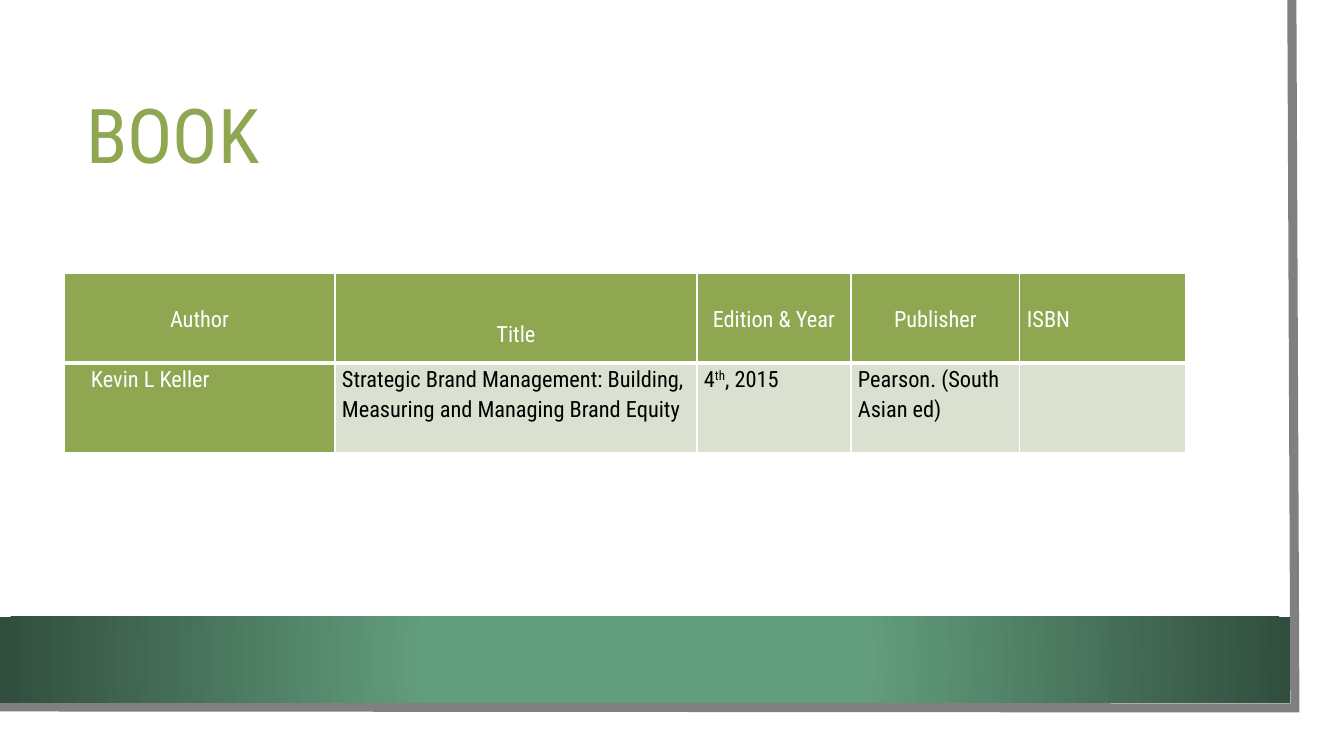
from pptx import Presentation
from pptx.dml.color import RGBColor
from pptx.enum.shapes import MSO_SHAPE
from pptx.enum.text import MSO_ANCHOR, PP_ALIGN
from pptx.oxml import parse_xml
from pptx.oxml.ns import nsdecls
from pptx.util import Pt

# Content: each cell is a list of (text, superscript) runs
TITLE = "BOOK"
HEADS = ["Author", "Title", "Edition & Year", "Publisher", "ISBN"]
BOOK = [
    [("Kevin L Keller", False)],
    [("Strategic Brand Management: Building, Measuring and Managing Brand Equity", False)],
    [("4", False), ("th", True), (", 2015", False)],
    [("Pearson. (South Asian ed)", False)],
    [],
]
ROWS = [[[(head, False)] for head in HEADS], BOOK]

# Layout in px
SLIDE = (1344, 756)
HEADING = (76, 76, 1146, 127)
BAND = (0, 617, 1290, 86)
EDGE = [(1292, 0), (1295, 708), (0, 707)]
GRID = (64, 273)
COLS = [271, 362, 154, 169, 166]
ROW_H = 90
PAD = 7
DROP = 30    # extra top margin of the "Title" head
INDENT = 20  # extra left margin of the author's name

FONT = "Roboto Condensed"
GREEN, PALE, WHITE, BLACK, GREY = "8FA751", "DBE1D0", "FFFFFF", "000000", "808080"


def px(n):
    return round(n * 914400 / 100.8)


def box(area):
    return [px(n) for n in area]


def rgb(code):
    return RGBColor.from_string(code)


def style(font, size, color):
    for name, value in {"name": FONT, "size": Pt(size), "bold": False}.items():
        setattr(font, name, value)
    font.color.rgb = rgb(color)


def border(cell, widths):
    props = cell._tc.get_or_add_tcPr()
    for spot, (side, width) in enumerate(widths.items()):
        props.insert(spot, parse_xml(
            f'<a:{side} {nsdecls("a")} w="{Pt(width)}"><a:solidFill>'
            f'<a:srgbClr val="{WHITE}"/></a:solidFill></a:{side}>'))


def draw_frame(slide):
    # Grey line along the right and bottom edges
    pen = slide.shapes.build_freeform(*EDGE[0], scale=px(1))
    pen.add_line_segments(EDGE[1:], close=False)
    edge = pen.convert_to_shape()
    edge.shadow.inherit = False
    edge.fill.background()
    edge.line.color.rgb = rgb(GREY)
    edge.line.width = Pt(6.5)
    edge.line._get_or_add_ln().append(
        parse_xml(f'<a:miter {nsdecls("a")} lim="800000"/>'))

    # Green band with a radial gradient
    band = slide.shapes.add_shape(MSO_SHAPE.RECTANGLE, *box(BAND))
    band.shadow.inherit = False
    band.line.fill.background()
    band.fill.gradient()
    grad = band._element.spPr.find("{*}gradFill")
    grad.getparent().replace(grad, parse_xml(
        f'<a:gradFill {nsdecls("a")} rotWithShape="1"><a:gsLst>'
        '<a:gs pos="34000"><a:srgbClr val="629D7D"/></a:gs>'
        '<a:gs pos="100000"><a:srgbClr val="314E3E"/></a:gs></a:gsLst>'
        '<a:path path="circle"><a:fillToRect l="50000" t="50000" r="50000" b="50000"/>'
        '</a:path></a:gradFill>'))


def draw_title(slide):
    title = slide.shapes.title
    title.left, title.top, title.width, title.height = box(HEADING)
    frame = title.text_frame
    frame.text = TITLE
    frame.word_wrap = True
    frame.vertical_anchor = MSO_ANCHOR.MIDDLE
    para = frame.paragraphs[0]
    para.alignment = PP_ALIGN.LEFT
    para.line_spacing = 0.9
    style(para.runs[0].font, 54, GREEN)


def draw_table(slide):
    area = box((*GRID, sum(COLS), ROW_H * len(ROWS)))
    table = slide.shapes.add_table(len(ROWS), len(COLS), *area).table
    table.horz_banding = False
    for col, width in zip(table.columns, COLS):
        col.width = px(width)
    for r, row in enumerate(ROWS):
        table.rows[r].height = px(ROW_H)
        for c, runs in enumerate(row):
            cell = table.cell(r, c)
            head = r == 0
            green = head or c == 0
            look = {
                "margin_left": px(PAD + (INDENT if (r, c) == (1, 0) else 0)),
                "margin_right": px(PAD),
                "margin_top": px(DROP if (r, c) == (0, 1) else 0),
                "margin_bottom": 0,
                "vertical_anchor": MSO_ANCHOR.MIDDLE if head else MSO_ANCHOR.TOP,
            }
            for name, value in look.items():
                setattr(cell, name, value)
            cell.fill.solid()
            cell.fill.fore_color.rgb = rgb(GREEN if green else PALE)
            border(cell, {"lnL": 1, "lnR": 1, "lnT": 1 if head else 3,
                          "lnB": 3 if head else 1})
            para = cell.text_frame.paragraphs[0]
            para.line_spacing = 1.15
            centred = head and c < len(COLS) - 1
            para.alignment = PP_ALIGN.CENTER if centred else PP_ALIGN.LEFT
            for text, raised in runs:
                run = para.add_run()
                run.text = text
                style(run.font, 16, WHITE if green else BLACK)
                if raised:
                    run._r.get_or_add_rPr().set("baseline", "30000")


def main():
    deck = Presentation()
    deck.slide_width, deck.slide_height = box(SLIDE)
    slide = deck.slides.add_slide(deck.slide_layouts[5])
    draw_frame(slide)
    draw_title(slide)
    draw_table(slide)
    deck.save("out.pptx")


if __name__ == "__main__":
    main()
